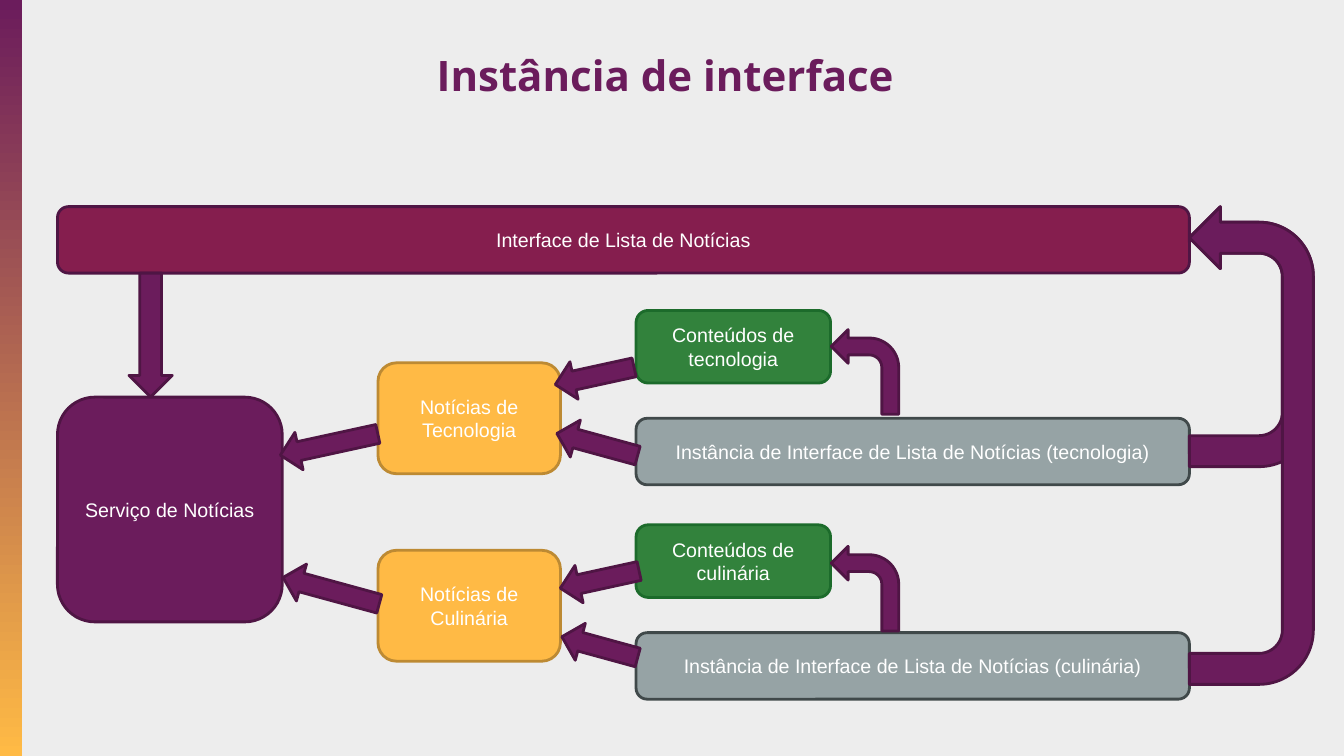
from dataclasses import dataclass

from pptx import Presentation
from pptx.dml.color import RGBColor
from pptx.enum.shapes import MSO_SHAPE
from pptx.enum.text import MSO_ANCHOR, PP_ALIGN
from pptx.oxml.ns import qn
from pptx.shapes.autoshape import Shape
from pptx.slide import Slide
from pptx.util import Inches, Pt

WIDTH, HEIGHT = Inches(13.33), Inches(7.5)
COLUMNS, ROWS = 40, 22.5
COLUMN, ROW = WIDTH / COLUMNS, HEIGHT / ROWS

RECTANGLE = MSO_SHAPE.RECTANGLE
ROUNDED = MSO_SHAPE.ROUNDED_RECTANGLE
LEFT_ARROW = MSO_SHAPE.LEFT_ARROW
DOWN_ARROW = MSO_SHAPE.DOWN_ARROW
BENT_ARROW = MSO_SHAPE.BENT_ARROW
U_TURN_ARROW = MSO_SHAPE.U_TURN_ARROW
CENTER = PP_ALIGN.CENTER
MIDDLE = MSO_ANCHOR.MIDDLE

PURPLE = RGBColor(0x6B, 0x1C, 0x5C)
DARK_PURPLE = RGBColor(0x4F, 0x15, 0x44)
WINE = RGBColor(0x85, 0x1E, 0x4E)
AMBER = RGBColor(0xFF, 0xBA, 0x45)
DARK_AMBER = RGBColor(0xBD, 0x8A, 0x33)
GREEN = RGBColor(0x32, 0x82, 0x3C)
DARK_GREEN = RGBColor(0x1C, 0x6B, 0x2B)
GRAY = RGBColor(0x96, 0xA3, 0xA5)
DARK_GRAY = RGBColor(0x40, 0x49, 0x4A)
WHITE = RGBColor(0xFF, 0xFF, 0xFF)
BACKGROUND = RGBColor(0xED, 0xED, 0xED)

TITLE_FONT, LABEL_FONT = "Open Sans", "Arial"
RISING, FALLING = 15.3, -12.3
NEWS_PITCH, CONTENT_PITCH, BEND_PITCH = 5.58, 6.38, 6.45
RETURN_LEFT, RETURN_TOP, RETURN_WIDTH = 35.4, 6.15, 3.69
RETURN_HEIGHTS = (7.74, 14.22)


@dataclass(frozen=True)
class Area:
    column: float
    row: float
    columns: float
    rows: float


@dataclass(frozen=True)
class Palette:
    fill: RGBColor
    line: RGBColor


@dataclass(frozen=True)
class Block:
    label: str
    area: Area
    palette: Palette


@dataclass(frozen=True)
class Arrow:
    preset: MSO_SHAPE
    area: Area
    rotation: float = 0
    mirrored: bool = False
    adjustments: tuple[float, ...] = ()


SERVICE = Palette(PURPLE, DARK_PURPLE)
INTERFACE = Palette(WINE, DARK_PURPLE)
NEWS = Palette(AMBER, DARK_AMBER)
CONTENT = Palette(GREEN, DARK_GREEN)
INSTANCE = Palette(GRAY, DARK_GRAY)


def place(slide: Slide, preset: MSO_SHAPE, area: Area) -> Shape:
    shape = slide.shapes.add_shape(
        preset,
        round(area.column * COLUMN),
        round(area.row * ROW),
        round(area.columns * COLUMN),
        round(area.rows * ROW),
    )
    shape.shadow.inherit = False
    return shape


def paint(shape: Shape, palette: Palette) -> None:
    shape.fill.solid()
    shape.fill.fore_color.rgb = palette.fill
    shape.line.color.rgb = palette.line
    shape.line.width = Pt(2)


def draw_block(slide: Slide, block: Block) -> None:
    shape = place(slide, ROUNDED, block.area)
    paint(shape, block.palette)
    frame = shape.text_frame
    frame.word_wrap = True
    frame.vertical_anchor = MIDDLE
    label = frame.paragraphs[0]
    label.text = block.label
    label.alignment = CENTER
    label.font.name = LABEL_FONT
    label.font.size = Pt(14)
    label.font.color.rgb = WHITE


def draw_arrow(slide: Slide, arrow: Arrow) -> None:
    shape = place(slide, arrow.preset, arrow.area)
    paint(shape, SERVICE)
    shape.rotation = arrow.rotation
    for index, value in enumerate(arrow.adjustments):
        shape.adjustments[index] = value
    if arrow.mirrored:
        shape.element.spPr.find(qn("a:xfrm")).set("flipH", "1")


def draw_side_strip(slide: Slide) -> None:
    strip = place(slide, RECTANGLE, Area(0, 0, 0.66, ROWS))
    strip.line.fill.background()
    strip.fill.gradient()
    strip.fill.gradient_angle = 270
    for stop, color, position in zip(strip.fill.gradient_stops, (PURPLE, AMBER), (0, 1)):
        stop.color.rgb = color
        stop.position = position


def draw_title(slide: Slide) -> None:
    title = slide.shapes.title
    title.left, title.top = round(3.87 * COLUMN), round(0.24 * ROW)
    title.width, title.height = round(31.86 * COLUMN), round(3.96 * ROW)
    frame = title.text_frame
    frame.word_wrap = True
    frame.vertical_anchor = MIDDLE
    heading = frame.paragraphs[0]
    heading.text = "Instância de interface"
    heading.alignment = CENTER
    heading.font.name = TITLE_FONT
    heading.font.size = Pt(30)
    heading.font.bold = True
    heading.font.color.rgb = PURPLE


def topic_blocks(index: int, topic: str) -> list[Block]:
    news_row = 10.8 + index * NEWS_PITCH
    shift = index * CONTENT_PITCH
    return [
        Block(f"Notícias de {topic.capitalize()}", Area(11.25, news_row, 5.43, 3.3), NEWS),
        Block(f"Conteúdos de {topic}", Area(18.93, 9.24 + shift, 5.79, 2.16), CONTENT),
        Block(
            f"Instância de Interface de Lista de Notícias ({topic})",
            Area(18.93, 12.45 + shift, 16.47, 1.98),
            INSTANCE,
        ),
    ]


def return_arrow(height: float) -> Arrow:
    offset = (height - RETURN_WIDTH) / 2
    area = Area(RETURN_LEFT - offset, RETURN_TOP + offset, height, RETURN_WIDTH)
    return Arrow(U_TURN_ARROW, area, 90, True, (0.25, 0.25, 0.25, 0.438, 1))


def bent_arrow(index: int) -> Arrow:
    area = Area(24.74, 9.81 + index * BEND_PITCH, 2.01, 2.52)
    return Arrow(BENT_ARROW, area, mirrored=True)


BLOCKS = [
    Block("Serviço de Notícias", Area(1.71, 11.82, 6.69, 6.69), SERVICE),
    Block("Interface de Lista de Notícias", Area(1.71, 6.15, 33.69, 1.98), INTERFACE),
    *topic_blocks(0, "tecnologia"),
    *topic_blocks(1, "culinária"),
]

ARROWS = [
    Arrow(DOWN_ARROW, Area(3.84, 8.13, 1.29, 3.69)),
    Arrow(LEFT_ARROW, Area(8.31, 12.66, 2.97, 1.14), FALLING),
    Arrow(LEFT_ARROW, Area(8.37, 17.01, 2.97, 1.14), RISING),
    Arrow(LEFT_ARROW, Area(16.5, 10.62, 2.4, 1.14), FALLING),
    Arrow(LEFT_ARROW, Area(16.53, 12.66, 2.49, 1.14), RISING),
    Arrow(LEFT_ARROW, Area(16.65, 16.68, 2.4, 1.14), FALLING),
    Arrow(LEFT_ARROW, Area(16.68, 18.69, 2.34, 1.14), RISING),
    *map(return_arrow, RETURN_HEIGHTS),
    *map(bent_arrow, range(2)),
]


def main() -> None:
    deck = Presentation()
    deck.slide_width, deck.slide_height = WIDTH, HEIGHT
    slide = deck.slides.add_slide(deck.slide_layouts.get_by_name("Title Only"))
    slide.background.fill.solid()
    slide.background.fill.fore_color.rgb = BACKGROUND
    draw_side_strip(slide)
    draw_title(slide)
    for block in BLOCKS:
        draw_block(slide, block)
    for arrow in ARROWS:
        draw_arrow(slide, arrow)
    deck.save("out.pptx")


if __name__ == "__main__":
    main()
